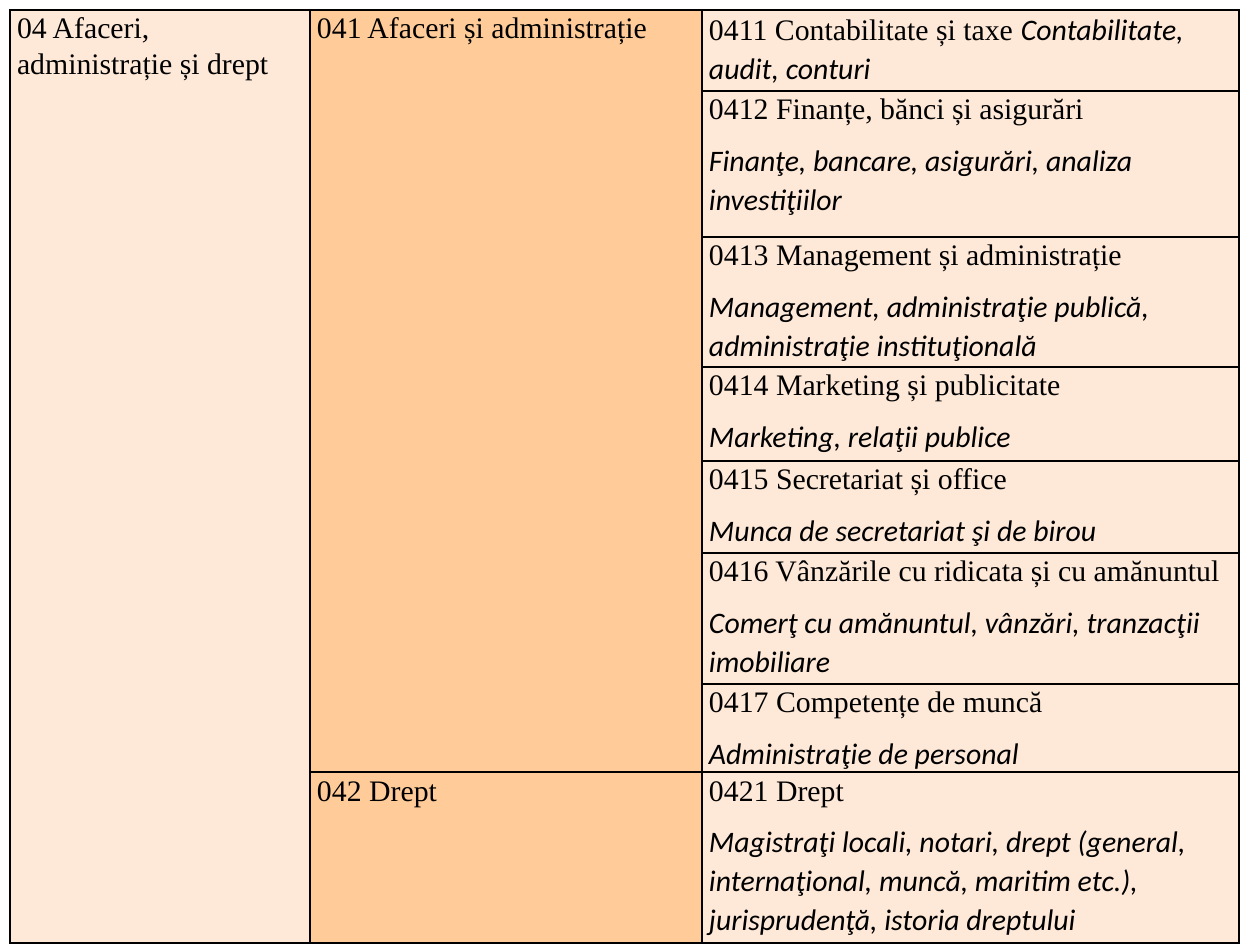
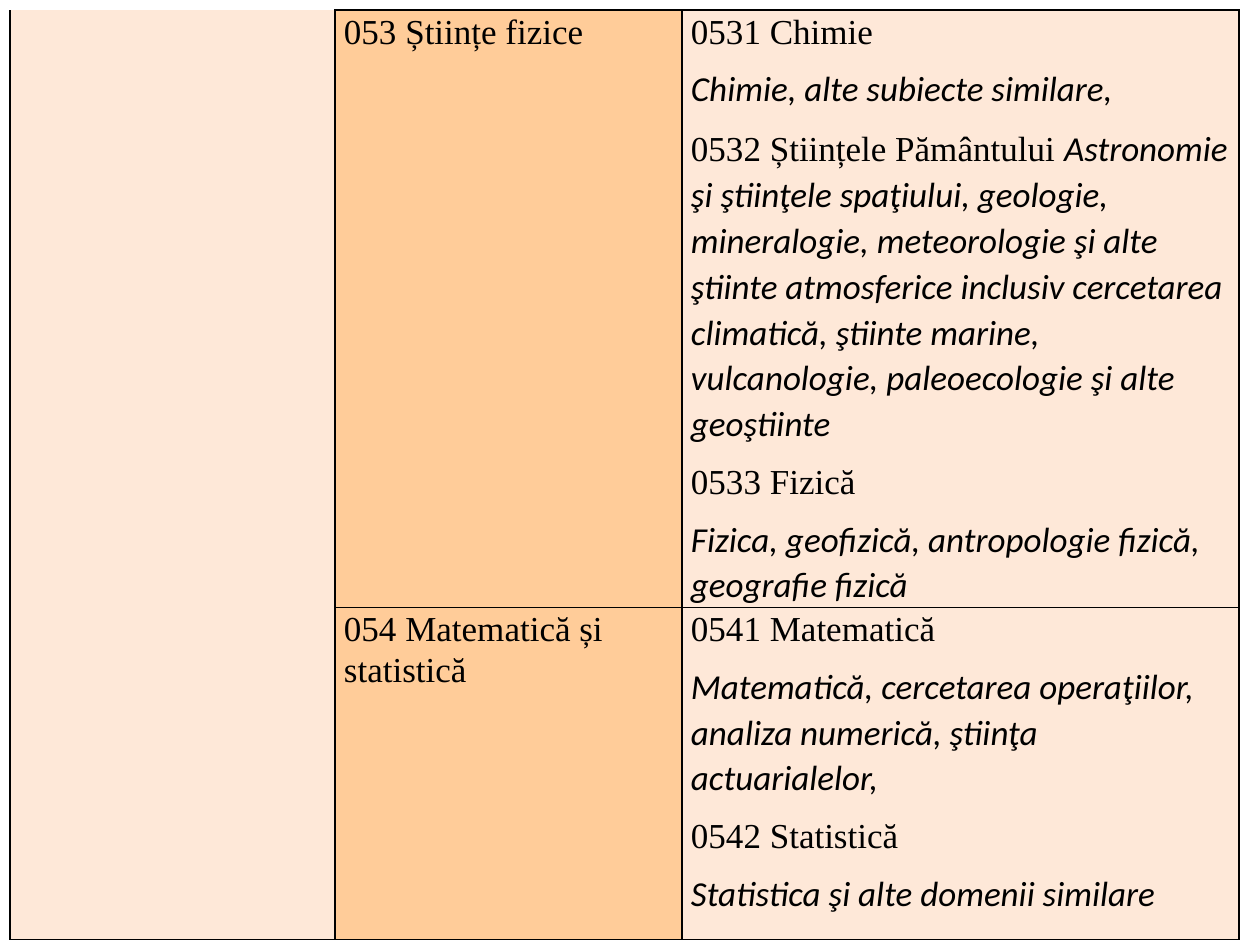
"""Build two slides of a table of fields of study."""
from lxml.etree import SubElement as Sub
from pptx import Presentation
from pptx.dml.color import RGBColor as Rgb
from pptx.oxml.ns import qn
from pptx.util import Emu, Pt

PEACH, AMBER, INK = "FEE8D8", "FFCC99", "000000"
SERIF, SANS = "Times New Roman", "Calibri"
WIDE, HIGH, EDGE = 1260, 945, 10

# In each paragraph, the part after the bar is in italics.
PAGES = [
    dict(
        size=17, pad=7, cols=(300, 392, 537),
        field="04 Afaceri, administrație și drept",
        groups=[
            ("041 Afaceri și administrație", [
                (81, ["0411 Contabilitate și taxe |Contabilitate, audit, conturi"]),
                (146, ["0412 Finanțe, bănci și asigurări",
                       "|Finanţe, bancare, asigurări, analiza investiţiilor"]),
                (130, ["0413 Management și administrație",
                       "|Management, administraţie publică, administraţie instituţională"]),
                (94, ["0414 Marketing și publicitate",
                      "|Marketing, relaţii publice"]),
                (92, ["0415 Secretariat și office",
                      "|Munca de secretariat şi de birou"]),
                (131, ["0416 Vânzările cu ridicata și cu amănuntul",
                       "|Comerţ cu amănuntul, vânzări, tranzacţii imobiliare"]),
                (88, ["0417 Competențe de muncă",
                      "|Administraţie de personal"]),
            ]),
            ("042 Drept", [
                (171, ["0421 Drept",
                       "|Magistraţi locali, notari, drept (general, internaţional, "
                       "muncă, maritim etc.), jurisprudenţă, istoria dreptului"]),
            ]),
        ],
    ),
    dict(
        size=20, pad=9, cols=(325, 347, 557), field="",
        groups=[
            ("053 Științe fizice", [
                (597, ["0531 Chimie",
                       "|Chimie, alte subiecte similare,",
                       "0532 Științele Pământului |Astronomie şi ştiinţele spaţiului, "
                       "geologie, mineralogie, meteorologie şi alte ştiinte atmosferice "
                       "inclusiv cercetarea climatică, ştiinte marine, vulcanologie, "
                       "paleoecologie şi alte geoştiinte",
                       "0533 Fizică",
                       "|Fizica, geofizică, antropologie fizică, geografie fizică"]),
            ]),
            ("054 Matematică și statistică", [
                (332, ["0541 Matematică",
                       "|Matematică, cercetarea operaţiilor, analiza numerică, "
                       "ştiinţa actuarialelor,",
                       "0542 Statistică",
                       "|Statistica şi alte domenii similare"]),
            ]),
        ],
    ),
]


def px(n):
    return Emu(n * 914400 // 126)


def tint(code):
    return Rgb.from_string(code)


def style(cell, fill, pad, sides):
    cell.margin_left = cell.margin_right = px(pad)
    cell.margin_top = cell.margin_bottom = 0
    props = cell._tc.get_or_add_tcPr()
    for side in "LRTB":
        line = Sub(props, qn("a:ln" + side), w=str(Pt(1)))
        if side in sides:
            paint = Sub(line, qn("a:solidFill"))
            Sub(paint, qn("a:srgbClr"), val=INK)
        else:
            Sub(line, qn("a:noFill"))
    cell.fill.solid()
    cell.fill.fore_color.rgb = tint(fill)


def write(cell, paras, size):
    frame = cell.text_frame
    for i, text in enumerate(paras):
        para = frame.add_paragraph() if i else frame.paragraphs[0]
        para.line_spacing, para.space_after = 1.07, Pt(8)
        plain, _, slant = text.partition("|")
        for part, face, lean in ((plain, SERIF, False), (slant, SANS, True)):
            if part:
                run = para.add_run()
                run.text = part
                font = run.font
                font.name, font.size, font.italic = face, Pt(size), lean
                font.color.rgb = tint(INK)


def build(slide, page):
    size, pad, field, groups = (page[k] for k in ("size", "pad", "field", "groups"))
    items = [item for _, group in groups for item in group]
    cols, last = page["cols"], len(items) - 1
    tall = sum(h for h, _ in items)
    table = slide.shapes.add_table(len(items), len(cols), px(EDGE), px(EDGE),
                                   px(sum(cols)), px(tall)).table
    table.first_row = table.horz_banding = False
    for col, wide in zip(table.columns, cols):
        col.width = px(wide)
    for r, (high, paras) in enumerate(items):
        table.rows[r].height = px(high)
        sides = "LR" + "T" * (r == 0 and field != "") + "B" * (r == last)
        style(table.cell(r, 0), PEACH, pad, sides)
        style(table.cell(r, 1), AMBER, pad, "LRTB")
        style(table.cell(r, 2), PEACH, pad, "LRTB")
        write(table.cell(r, 2), paras, size)
    if field:
        write(table.cell(0, 0), [field], size)
    top = 0
    for name, group in groups:
        end = top + len(group) - 1
        write(table.cell(top, 1), [name], size)
        if end > top:
            for c in (0, 1):
                table.cell(top, c).merge(table.cell(end, c))
        top = end + 1


def main():
    deck = Presentation()
    deck.slide_width, deck.slide_height = px(WIDE), px(HIGH)
    for page in PAGES:
        build(deck.slides.add_slide(deck.slide_layouts[6]), page)
    deck.save("out.pptx")


if __name__ == "__main__":
    main()
